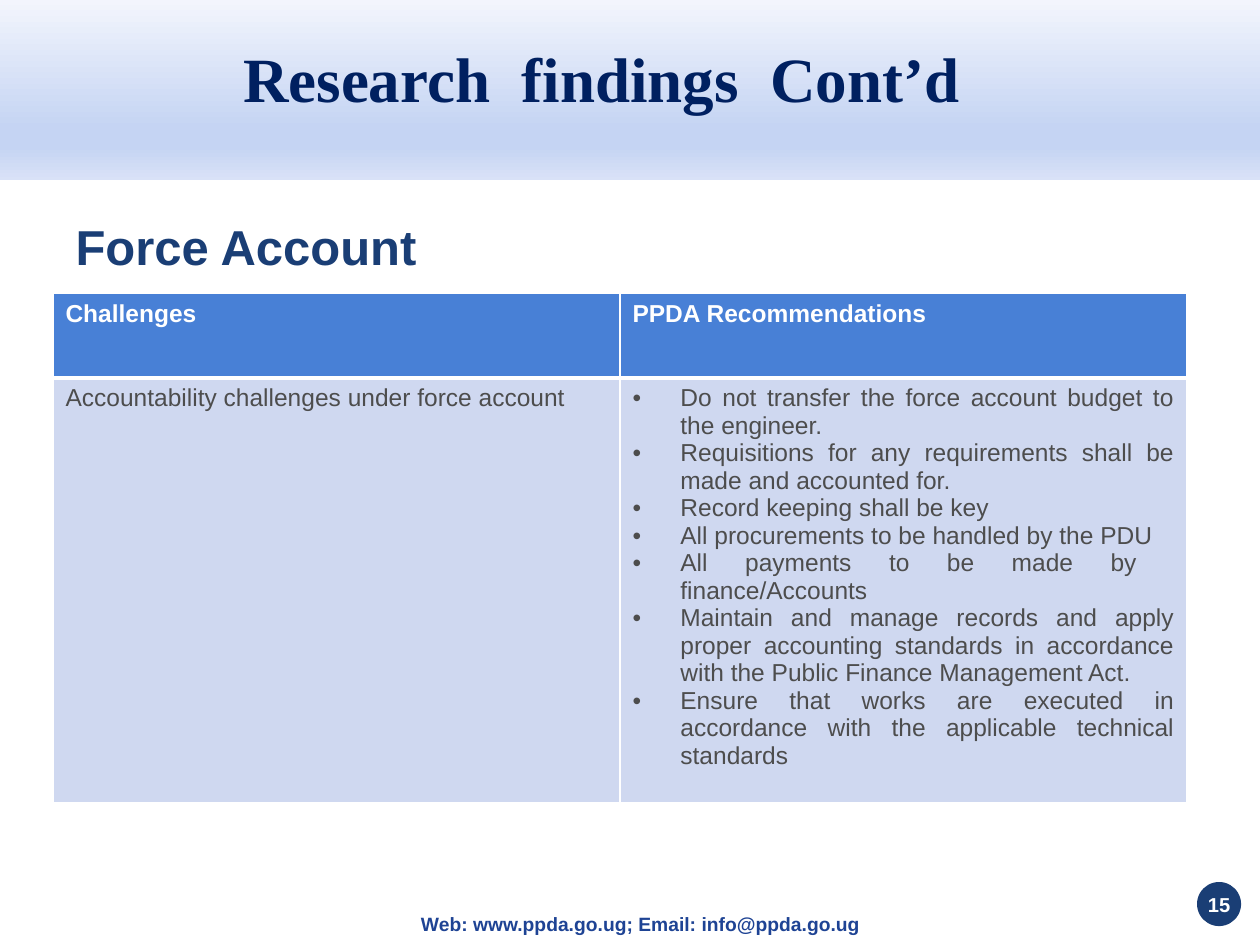
from lxml import etree
from pptx import Presentation
from pptx import util as u
from pptx.dml import color
from pptx.enum import shapes, text
from pptx.oxml import ns

HUES = {
    "white": "FFFFFF", "title": "002060", "navy": "1A3E75", "web": "1E4394",
    "head": "4880D6", "cell": "CFD8F0", "gray": "4D4D4D",
}
BAND = [(0, "F9FAFE"), (74, "C5D4F3"), (83, "C5D4F3"), (100, "D9E2F7")]
HEADS = ["Challenges", "PPDA Recommendations"]
ISSUE = "Accountability challenges under force account"
ADVICE = [
    "Do not transfer the force account budget to the engineer.",
    "Requisitions for any requirements shall be made and accounted for.",
    "Record keeping shall be key",
    "All procurements to be handled by the PDU",
    "All payments to be made by  finance/Accounts",
    "Maintain and manage records and apply proper accounting standards "
    "in accordance with the Public Finance Management Act.",
    "Ensure that works are executed in accordance with the applicable "
    "technical standards",
]


def rgb(name):
    """Return the named colour."""
    return color.RGBColor.from_string(HUES[name])


def sub(top, tag, **attrs):
    """Append a DrawingML element to a parent."""
    return etree.SubElement(top, ns.qn("a:" + tag), attrs)


def place(item, *box):
    """Set left, top, width and height in inches."""
    item.left, item.top, item.width, item.height = map(u.Inches, box)


def write(para, words, size, hue, bold=True, face="Arial", align=text.PP_ALIGN.LEFT):
    """Add one formatted run to a paragraph."""
    para.alignment = align
    run = para.add_run()
    run.text = words
    font = run.font
    font.name, font.size, font.bold = face, u.Pt(size), bold
    font.color.rgb = rgb(hue)


def indent(para, depth, mark=None):
    """Give a paragraph a hanging indent and an optional bullet."""
    props = para._p.get_or_add_pPr()
    props.set("marL", str(u.Inches(depth)))
    props.set("indent", str(-u.Inches(depth)))
    if mark:
        sub(props, "buFont", typeface="Arial")
        sub(props, "buChar", char=mark)
    else:
        sub(props, "buNone")


def add_band(slide):
    """Put the shaded band behind the title."""
    band = slide.shapes.add_shape(shapes.MSO_SHAPE.RECTANGLE, 0, 0, 0, 0)
    place(band, -0.02, -0.14, 10.03, 1.57)
    band.shadow.inherit = False
    band.line.fill.background()
    band.fill.gradient()
    band.fill.gradient_angle = 270
    stops = band._element.spPr.find(".//" + ns.qn("a:gsLst"))
    for old in list(stops):
        stops.remove(old)
    for spot, hue in BAND:
        stop = sub(stops, "gs", pos=str(spot * 1000))
        sub(stop, "srgbClr", val=hue)
    slide.shapes._spTree.insert(2, band._element)


def add_heads(slide):
    """Fill the title and the body heading."""
    title, body = slide.placeholders
    place(title, 1.83, 0.33, 7.17, 0.56)
    place(body, 0.5, 1.67, 8.35, 4.53)
    for item in (title, body):
        item.text_frame.auto_size = text.MSO_AUTO_SIZE.NONE
    title.text_frame.vertical_anchor = text.MSO_ANCHOR.MIDDLE
    write(title.text_frame.paragraphs[0], "Research  findings  Cont’d",
          36, "title", face="Times New Roman")
    para = body.text_frame.paragraphs[0]
    para.space_before = u.Pt(0)
    indent(para, 0.51)
    write(para, "Force Account", 28, "navy")


def add_foot(slide):
    """Add the contact line and the page number disc."""
    foot = slide.shapes.add_textbox(0, 0, 0, 0)
    place(foot, 2.67, 7.19, 4.83, 0.29)
    disc = slide.shapes.add_shape(shapes.MSO_SHAPE.OVAL, 0, 0, 0, 0)
    place(disc, 9.5, 7, 0.35, 0.35)
    disc.shadow.inherit = False
    disc.fill.solid()
    disc.fill.fore_color.rgb = rgb("navy")
    disc.line.fill.background()
    frame = disc.text_frame
    frame.margin_left = frame.margin_right = u.Inches(0.03)
    frame.margin_top = frame.margin_bottom = u.Inches(0.03)
    for item, words, size, hue in (
        (foot, "Web: www.ppda.go.ug; Email: info@ppda.go.ug", 11, "web"),
        (disc, "15", 11.5, "white"),
    ):
        frame = item.text_frame
        frame.word_wrap = True
        frame.vertical_anchor = text.MSO_ANCHOR.MIDDLE
        write(frame.paragraphs[0], words, size, hue, align=text.PP_ALIGN.CENTER)


def paint(cell, hue, **widths):
    """Set the white borders and the fill of a cell."""
    props = cell._tc.get_or_add_tcPr()
    for side in "LRTB":
        line = sub(props, "ln" + side, w=str(u.Pt(widths.get(side, 1))))
        sub(sub(line, "solidFill"), "srgbClr", val=HUES["white"])
    cell.fill.solid()
    cell.fill.fore_color.rgb = rgb(hue)


def add_grid(slide):
    """Add the table of challenges and recommendations."""
    grid = slide.shapes.add_table(
        2, 2, u.Inches(0.42), u.Inches(2.33), u.Inches(9), u.Inches(3.82)).table
    for row, tall in zip(grid.rows, (0.67, 3.15)):
        row.height = u.Inches(tall)
    for col, words in enumerate(HEADS):
        cell = grid.cell(0, col)
        paint(cell, "head", B=3)
        write(cell.text_frame.paragraphs[0], words, 14, "white")
        paint(grid.cell(1, col), "cell", T=3)
    write(grid.cell(1, 0).text_frame.paragraphs[0], ISSUE, 14, "gray", False)
    frame = grid.cell(1, 1).text_frame
    for num, words in enumerate(ADVICE):
        para = frame.add_paragraph() if num else frame.paragraphs[0]
        indent(para, 0.38, "•")
        write(para, words, 14, "gray", False, align=text.PP_ALIGN.JUSTIFY)


def main():
    """Build and save the slide."""
    deck = Presentation()
    deck.slide_width, deck.slide_height = u.Inches(10), u.Inches(7.5)
    slide = deck.slides.add_slide(deck.slide_layouts[1])
    add_heads(slide)
    add_band(slide)
    add_foot(slide)
    add_grid(slide)
    deck.save("out.pptx")


if __name__ == "__main__":
    main()
